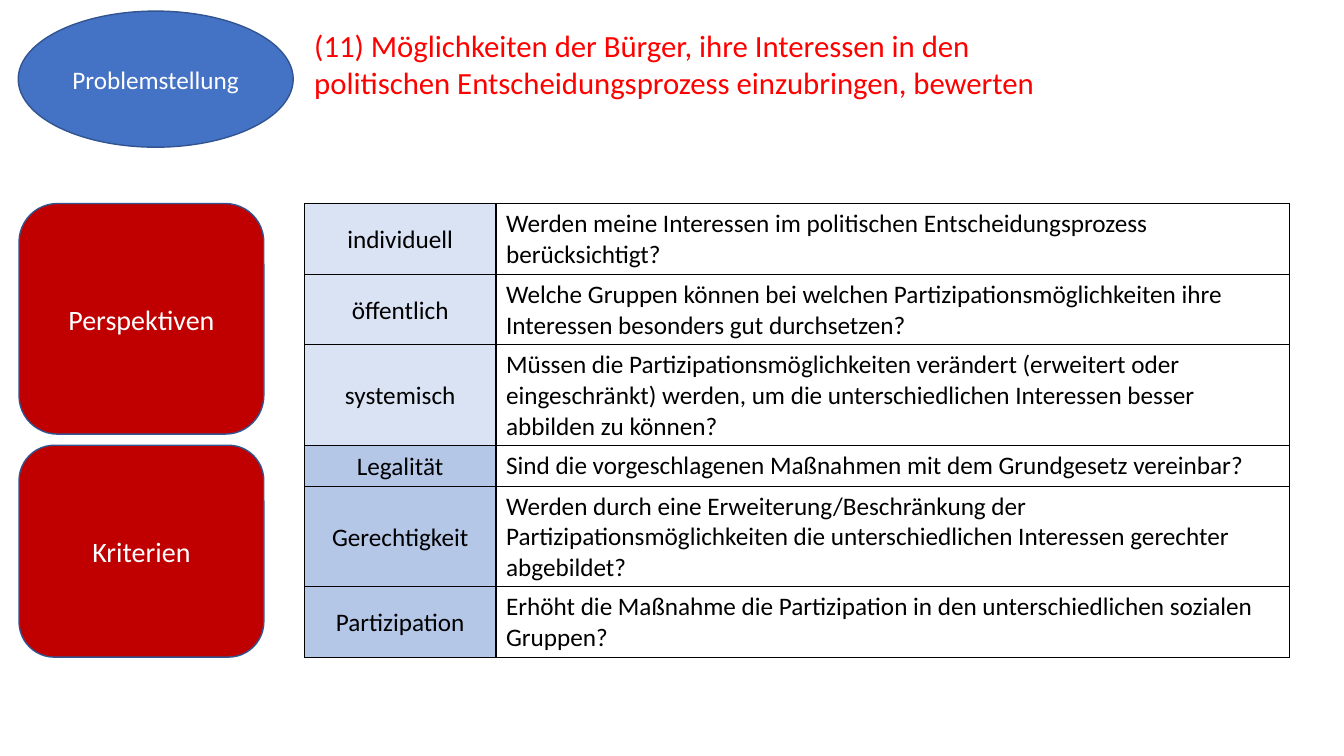
import dataclasses

import pptx
import pptx.dml.color
import pptx.enum.shapes
import pptx.enum.text
import pptx.oxml
import pptx.oxml.ns
import pptx.util

Cm = pptx.util.Cm
Pt = pptx.util.Pt
ALIGN = pptx.enum.text.PP_ALIGN
ANCHOR = pptx.enum.text.MSO_ANCHOR
SHAPES = pptx.enum.shapes.MSO_SHAPE


@dataclasses.dataclass(frozen=True)
class Theme:
    font: str = "Calibri"
    text: str = "000000"
    light_text: str = "FFFFFF"
    heading: str = "FF0000"
    topic: str = "4472C4"
    group: str = "C00000"
    outline: str = "325491"
    border: str = "000000"
    body_size: int = 18
    group_size: int = 20
    heading_size: int = 22


THEME = Theme()

# Each group: label, fill of its key cells, rows of (key, question, text lines)
GROUPS = [
    ("Perspektiven", "DAE3F3", [
        ("individuell", "Werden meine Interessen im politischen "
         "Entscheidungsprozess berücksichtigt?", 2),
        ("öffentlich", "Welche Gruppen können bei welchen "
         "Partizipationsmöglichkeiten ihre Interessen besonders gut "
         "durchsetzen?", 2),
        ("systemisch", "Müssen die Partizipationsmöglichkeiten verändert "
         "(erweitert oder eingeschränkt) werden, um die unterschiedlichen "
         "Interessen besser abbilden zu können?", 3),
    ]),
    ("Kriterien", "B4C7E7", [
        ("Legalität", "Sind die vorgeschlagenen Maßnahmen mit dem "
         "Grundgesetz vereinbar?", 1),
        ("Gerechtigkeit", "Werden durch eine Erweiterung/Beschränkung der "
         "Partizipationsmöglichkeiten die unterschiedlichen Interessen "
         "gerechter abgebildet?", 3),
        ("Partizipation", "Erhöht die Maßnahme die Partizipation in den "
         "unterschiedlichen sozialen Gruppen?", 2),
    ]),
]


def rgb(value):
    return pptx.dml.color.RGBColor.from_string(value)


def row_height(lines):
    return Cm(0.28 + 0.75 * lines)


def write(frame, text, size, color, align=ALIGN.LEFT):
    frame.text = text
    para = frame.paragraphs[0]
    para.alignment = align
    span = para.runs[0]
    span.font.name = THEME.font
    span.font.size = Pt(size)
    span.font.color.rgb = rgb(color)


def add_label(page, kind, box, text, fill, size):
    """Filled shape with a centred label."""
    shape = page.shapes.add_shape(kind, *box)
    shape.shadow.inherit = False
    shape.fill.solid()
    shape.fill.fore_color.rgb = rgb(fill)
    shape.line.color.rgb = rgb(THEME.outline)
    shape.line.width = Pt(1)
    shape.text_frame.vertical_anchor = ANCHOR.MIDDLE
    write(shape.text_frame, text, size, THEME.light_text, ALIGN.CENTER)


def add_header(page, left, top):
    """Topic ellipse with the heading to its right."""
    add_label(page, SHAPES.OVAL, (left, top, Cm(6.93), Cm(3.43)),
              "Problemstellung", THEME.topic, THEME.body_size)
    heading = page.shapes.add_textbox(left + Cm(7.21), top + Cm(0.28),
                                      Cm(19.58), Cm(2.13))
    heading.text_frame.word_wrap = True
    write(heading.text_frame,
          "(11) Möglichkeiten der Bürger, ihre Interessen in den politischen "
          "Entscheidungsprozess einzubringen, bewerten",
          THEME.heading_size, THEME.heading)


def add_group_labels(page, left, top, width):
    """One rounded box beside the table rows of each group."""
    gap = Cm(0.28)
    for label, _, rows in GROUPS:
        height = sum(row_height(lines) for _, _, lines in rows)
        add_label(page, SHAPES.ROUNDED_RECTANGLE,
                  (left, top, width, height - gap),
                  label, THEME.group, THEME.group_size)
        top += height
        gap, top = 0, top


def add_borders(cell):
    properties = cell._tc.get_or_add_tcPr()
    for side in ("lnL", "lnR", "lnT", "lnB"):
        properties.append(pptx.oxml.parse_xml(
            f'<a:{side} {pptx.oxml.ns.nsdecls("a")} w="{Pt(1)}"><a:solidFill>'
            f'<a:srgbClr val="{THEME.border}"/></a:solidFill></a:{side}>'))


def add_questions(page, left, top, widths):
    """Table of keys and guiding questions."""
    rows = [(fill, *row) for _, fill, group in GROUPS for row in group]
    heights = [row_height(lines) for *_, lines in rows]
    table = page.shapes.add_table(len(rows), len(widths), left, top,
                                  sum(widths), sum(heights)).table
    table.first_row = table.horz_banding = False
    for column, width in zip(table.columns, widths):
        column.width = width
    for index, (fill, key, question, _) in enumerate(rows):
        table.rows[index].height = heights[index]
        key_cell, question_cell = table.rows[index].cells
        for cell in (key_cell, question_cell):
            cell.margin_bottom = Cm(0.07)
            add_borders(cell)
        key_cell.fill.solid()
        key_cell.fill.fore_color.rgb = rgb(fill)
        key_cell.vertical_anchor = ANCHOR.MIDDLE
        question_cell.fill.background()
        write(key_cell.text_frame, key, THEME.body_size, THEME.text,
              ALIGN.CENTER)
        write(question_cell.text_frame, question, THEME.body_size, THEME.text)


def main():
    deck = pptx.Presentation()
    deck.slide_width, deck.slide_height = Cm(33.87), Cm(19.05)
    page = deck.slides.add_slide(deck.slide_layouts[6])
    body_top = Cm(5.13)
    add_header(page, Cm(0.46), Cm(0.28))
    add_group_labels(page, Cm(0.48), body_top, Cm(6.17))
    add_questions(page, Cm(7.67), body_top, [Cm(4.83), Cm(19.99)])
    deck.save("out.pptx")


if __name__ == "__main__":
    main()
